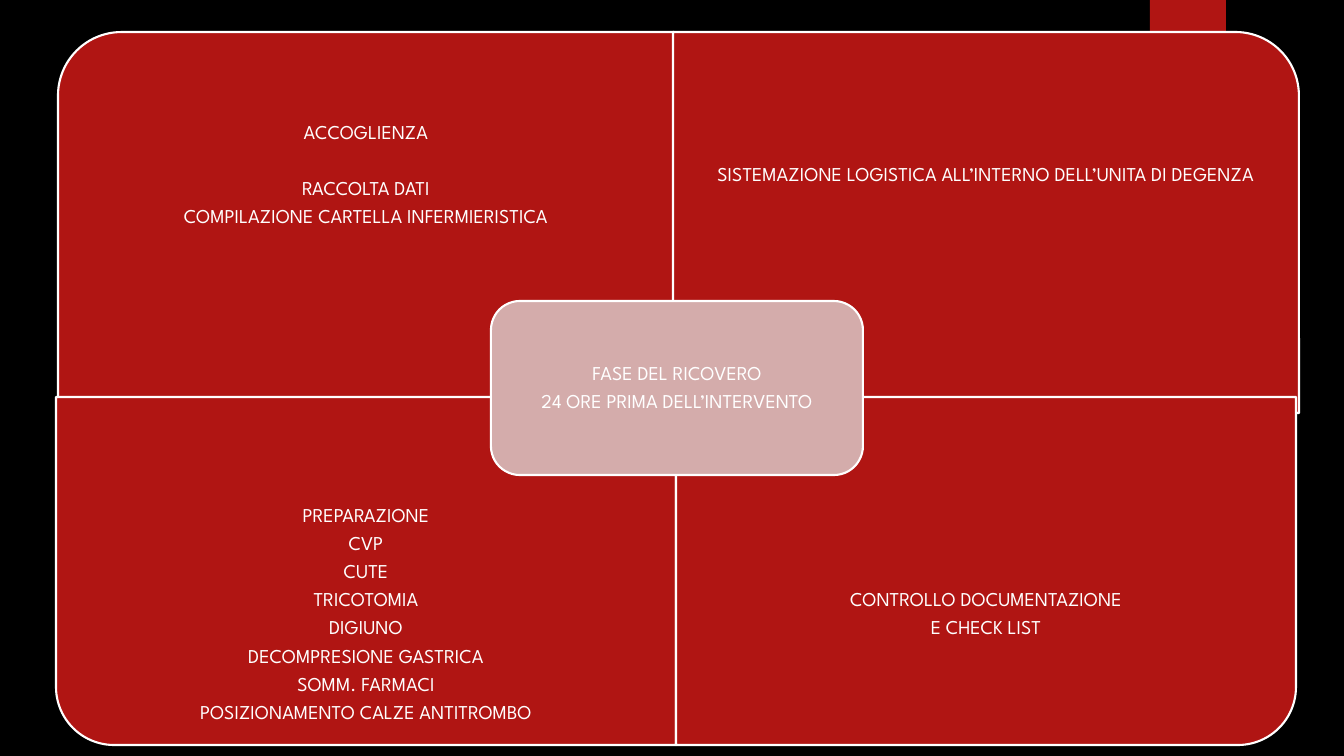
from pptx import Presentation
from pptx.dml.color import RGBColor
from pptx.enum.shapes import MSO_SHAPE
from pptx.enum.text import MSO_ANCHOR, PP_ALIGN
from pptx.util import Emu, Pt

RECTANGLE = MSO_SHAPE.RECTANGLE
ROUNDED = MSO_SHAPE.ROUNDED_RECTANGLE
ONE_ROUND_CORNER = MSO_SHAPE.ROUND_1_RECTANGLE
MIDDLE = MSO_ANCHOR.MIDDLE
CENTER = PP_ALIGN.CENTER

EMU_PER_INCH = 914400
PX_PER_INCH = 100.8
BLACK, RED, PINK, WHITE = "000000", "B01513", "D4ACAB", "FFFFFF"
FONT = "League Spartan"
LINE_GAP = 5
GROUP_GAP = 25

PHASES = [
    ((58, 32, 616, 381), 270, (58, 32, 616, 286),
     ["ACCOGLIENZA", "RACCOLTA DATI", "COMPILAZIONE CARTELLA INFERMIERISTICA"], 1),
    ((673, 32, 626, 381), 0, (673, 32, 626, 286),
     ["SISTEMAZIONE LOGISTICA ALL’INTERNO DELL’UNITA DI DEGENZA"], 0),
    ((56, 397, 620, 348), 180, (56, 484, 620, 261),
     ["PREPARAZIONE", "CVP", "CUTE", "TRICOTOMIA", "DIGIUNO",
      "DECOMPRESIONE GASTRICA", "SOMM. FARMACI", "POSIZIONAMENTO CALZE ANTITROMBO"], 0),
    ((676, 397, 620, 348), 90, (676, 484, 620, 261),
     ["CONTROLLO DOCUMENTAZIONE", "E CHECK LIST"], 0),
]


def px(length):
    """Turn pixels into EMU."""
    return Emu(round(length * EMU_PER_INCH / PX_PER_INCH))


def color(hex_string):
    """Turn a hex string into a colour."""
    return RGBColor.from_string(hex_string)


def add_block(slide, kind, box, fill, outlined=True):
    """Add a flat filled shape, with a white outline if asked."""
    block = slide.shapes.add_shape(kind, *map(px, box))
    block.shadow.inherit = False
    block.fill.solid()
    block.fill.fore_color.rgb = color(fill)
    if outlined:
        block.line.color.rgb = color(WHITE)
        block.line.width = Pt(1.5)
    else:
        block.line.fill.background()
    return block


def add_steps(slide, box, steps, inset, heading_lines=0):
    """Add centred lines, with a wider gap after the heading lines."""
    label = slide.shapes.add_textbox(*map(px, box))
    frame = label.text_frame
    frame.word_wrap = True
    frame.vertical_anchor = MIDDLE
    frame.margin_left = frame.margin_right = px(inset)
    frame.margin_top = frame.margin_bottom = px(inset)
    frame.text = "\n".join(steps)
    for number, step in enumerate(frame.paragraphs, 1):
        step.alignment = CENTER
        step.line_spacing = 0.9
        step.space_after = Pt(GROUP_GAP if number == heading_lines else LINE_GAP)
        for run in step.runs:
            run.font.name = FONT
            run.font.size = Pt(14)
            run.font.color.rgb = color(WHITE)


def add_phase(slide, box, rotation, label_box, steps, heading_lines):
    """Add a quadrant whose rounded corner is turned to the outside."""
    left, top, width, height = box
    if rotation in (90, 270):
        left += (width - height) / 2
        top += (height - width) / 2
        width, height = height, width
    quadrant = add_block(slide, ONE_ROUND_CORNER, (left, top, width, height), RED)
    quadrant.rotation = rotation
    add_steps(slide, label_box, steps, 11, heading_lines)


def add_center(slide, box):
    """Add the central card that names the whole phase."""
    add_block(slide, ROUNDED, box, PINK)
    left, top, width, height = box
    add_steps(slide, (left + 8, top + 8, width - 16, height - 16),
              ["FASE DEL RICOVERO", "24 ORE PRIMA DELL’INTERVENTO"], 6)


def main():
    """Build and save the slide."""
    deck = Presentation()
    deck.slide_width, deck.slide_height = px(1344), px(756)
    slide = deck.slides.add_slide(deck.slide_layouts[6])
    slide.background.fill.solid()
    slide.background.fill.fore_color.rgb = color(BLACK)
    add_block(slide, RECTANGLE, (1150, 0, 76, 126), RED, outlined=False)
    for phase in PHASES:
        add_phase(slide, *phase)
    add_center(slide, (491, 301, 372, 174))
    deck.save("out.pptx")


if __name__ == "__main__":
    main()
